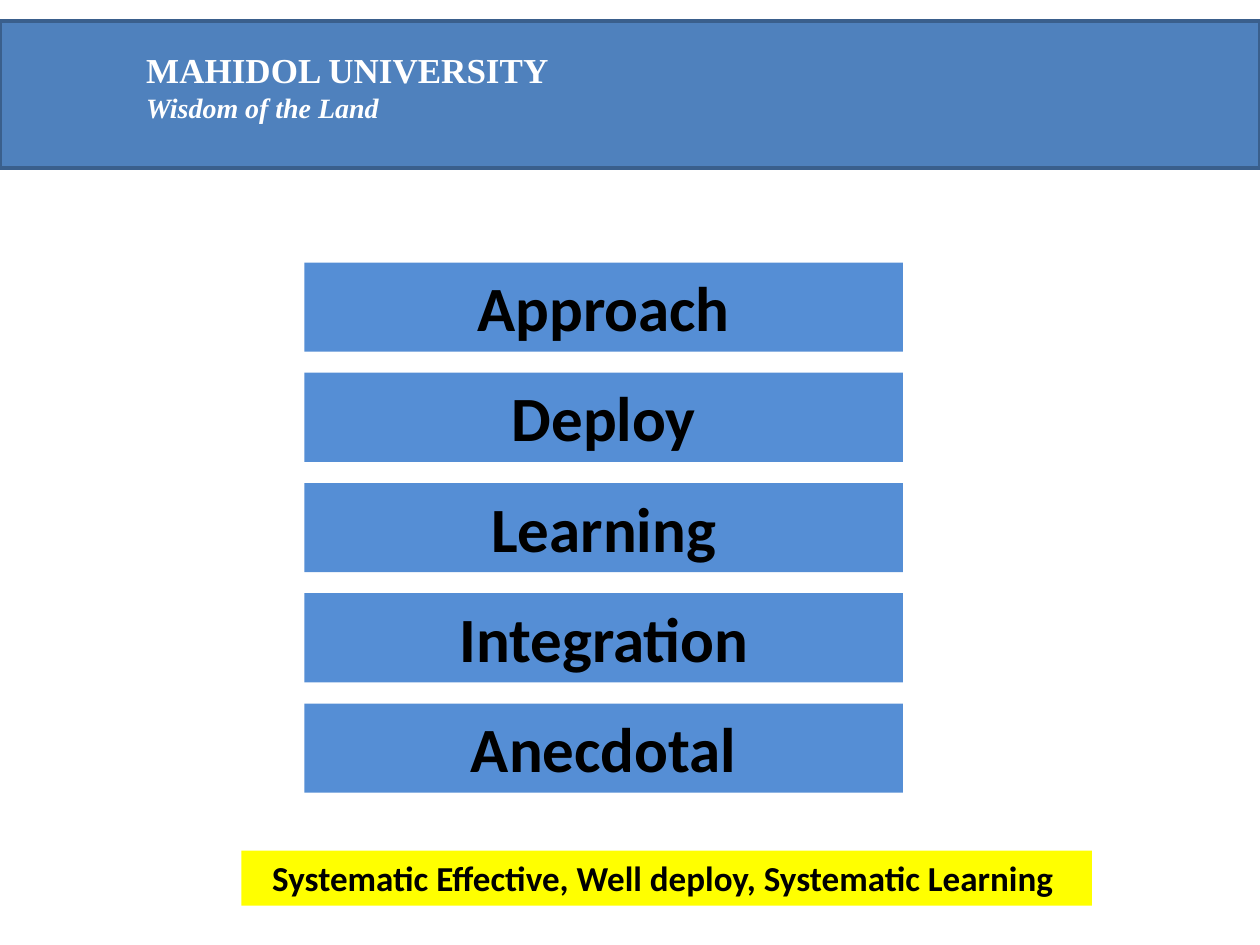
"""Build the Mahidol University slide listing the five assessment steps."""
from pptx import Presentation
from pptx import util as u
from pptx.dml import color
from pptx.enum import shapes, text

THEME = {
    "banner": "4F81BD", "banner_line": "3A5F8C", "step": "558ED5",
    "summary": "FFFF00", "ink": "000000", "light": "FFFFFF",
    "body": "Calibri", "heading": "Times New Roman",
    "step_size": 36, "name_size": 20, "motto_size": 16, "summary_size": 20,
}
STEPS = ["Approach", "Deploy", "Learning", "Integration", "Anecdotal"]
STEP_TOP, STEP_PITCH = 25, 10.5

prs = Presentation()
prs.slide_width, prs.slide_height = u.Inches(10), u.Inches(7.5)
COL, ROW = prs.slide_width / 120, prs.slide_height / 90
s = prs.slides.add_slide(prs.slide_layouts[6])


def grid(left, top, width, height):
    return int(left * COL), int(top * ROW), int(width * COL), int(height * ROW)


def add_text(content, *, at, fill=None, line=None, font=THEME["body"],
             tint=THEME["ink"], sizes=(20,), italics=(False,),
             align=text.PP_ALIGN.CENTER, wrap=True):
    if fill:
        sp = s.shapes.add_shape(shapes.MSO_SHAPE.RECTANGLE, *grid(*at))
        sp.shadow.inherit = False
        sp.fill.solid()
        sp.fill.fore_color.rgb = color.RGBColor.from_string(fill)
        if line:
            sp.line.color.rgb = color.RGBColor.from_string(line)
            sp.line.width = u.Pt(2)
        else:
            sp.line.fill.background()
    else:
        sp = s.shapes.add_textbox(*grid(*at))
    if not content:
        return
    tf = sp.text_frame
    tf.word_wrap = wrap
    tf.auto_size = text.MSO_AUTO_SIZE.SHAPE_TO_FIT_TEXT
    tf.vertical_anchor = text.MSO_ANCHOR.TOP
    tf.text = content
    for p, size, italic in zip(tf.paragraphs, sizes, italics):
        p.alignment = align
        for r in p.runs:
            r.font.name, r.font.size = font, u.Pt(size)
            r.font.bold, r.font.italic = True, italic
            r.font.color.rgb = color.RGBColor.from_string(tint)


add_text("", at=(0, 2, 120, 14), fill=THEME["banner"], line=THEME["banner_line"])
add_text("MAHIDOL UNIVERSITY\nWisdom of the Land", at=(12.75, 4, 41, 8.4),
         font=THEME["heading"], tint=THEME["light"],
         sizes=(THEME["name_size"], THEME["motto_size"]), italics=(False, True),
         align=text.PP_ALIGN.LEFT, wrap=False)

for i, step in enumerate(STEPS):
    add_text(step, at=(29, STEP_TOP + i * STEP_PITCH, 57, 8.5),
             fill=THEME["step"], sizes=(THEME["step_size"],))

add_text("Systematic Effective, Well deploy, Systematic Learning ",
         at=(23, 81, 81, 5.25), fill=THEME["summary"],
         sizes=(THEME["summary_size"],))

prs.save("out.pptx")
